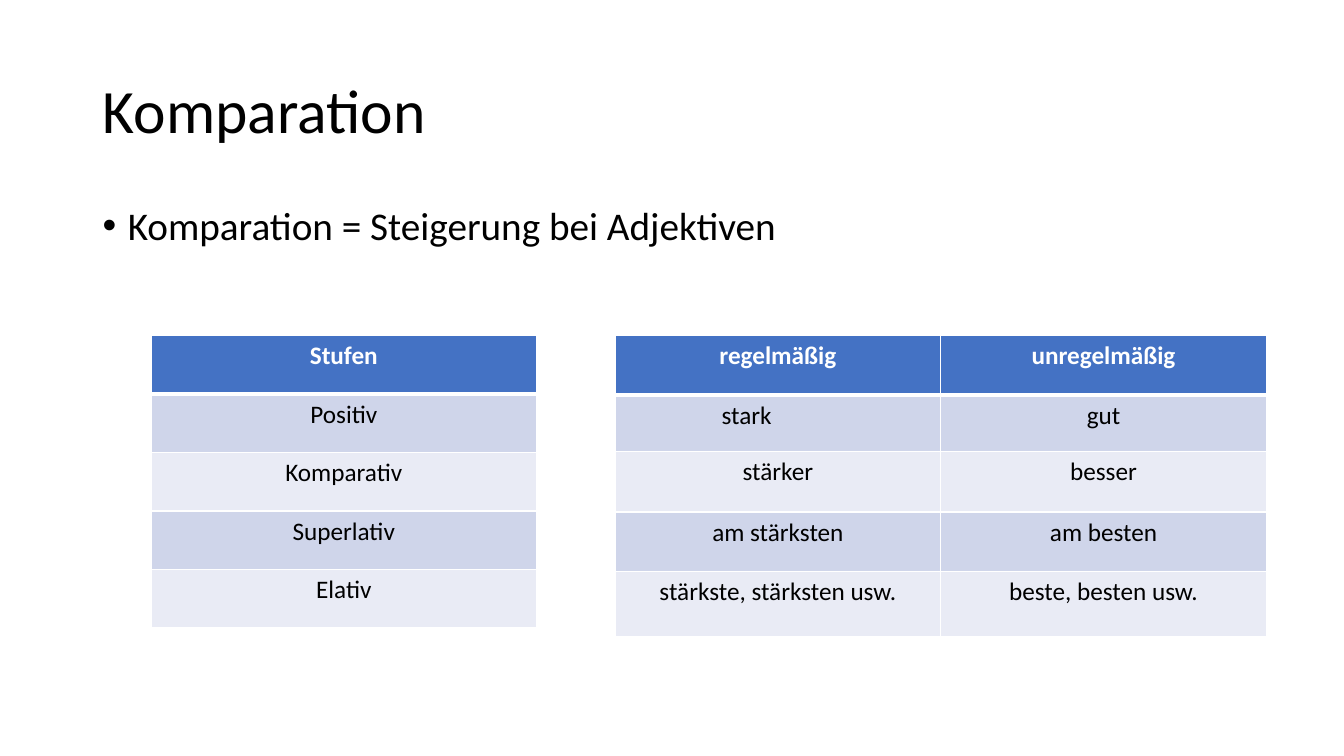
from lxml import etree
from pptx import Presentation
from pptx.dml.color import RGBColor
from pptx.enum.text import MSO_ANCHOR, PP_ALIGN
from pptx.oxml.ns import qn
from pptx.util import Inches, Pt

LEFT, CENTER = PP_ALIGN.LEFT, PP_ALIGN.CENTER
TOP, MIDDLE = MSO_ANCHOR.TOP, MSO_ANCHOR.MIDDLE
FONT = "Calibri"
BLACK, WHITE, HEADER = "000000", "FFFFFF", "4472C4"
BANDS = ("E9EBF5", "CFD5EA")
CONTENT_LEFT, CONTENT_WIDTH = 0.92, 11.5
TABLE_TOP = 3.33

LEVELS = [["Stufen"], ["Positiv"], ["Komparativ"], ["Superlativ"], ["Elativ"]]
FORMS = [
    ["regelmäßig", "unregelmäßig"],
    ["stark", "gut"],
    ["stärker", "besser"],
    ["am stärksten", "am besten"],
    ["stärkste, stärksten usw.", "beste, besten usw."],
]


def color(value):
    """Turn a hex string into a colour."""
    return RGBColor.from_string(value)


def style(para, size, tint, align, bold=False):
    """Set the font and alignment of a paragraph."""
    para.alignment = align
    para.font.name = FONT
    para.font.size = Pt(size)
    para.font.bold = bold
    para.font.color.rgb = color(tint)


def add_title(page, text, left, top, width, height):
    """Place the title placeholder in its box."""
    title = page.shapes.title
    title.left, title.top = Inches(left), Inches(top)
    title.width, title.height = Inches(width), Inches(height)
    frame = title.text_frame
    frame.text = text
    frame.vertical_anchor = MIDDLE
    para = frame.paragraphs[0]
    para.line_spacing = 0.9
    style(para, 44, BLACK, LEFT)


def add_bullet(page, text, left, top, width, height):
    """Add a text box holding one bulleted line."""
    box = page.shapes.add_textbox(Inches(left), Inches(top), Inches(width), Inches(height))
    frame = box.text_frame
    frame.word_wrap = True
    frame.vertical_anchor = TOP
    para = frame.paragraphs[0]
    para.text = text
    para.line_spacing = 0.9
    properties = para._p.get_or_add_pPr()
    properties.set("marL", str(Inches(0.25)))
    properties.set("indent", str(-Inches(0.25)))
    etree.SubElement(properties, qn("a:buFont"), typeface="Arial")
    etree.SubElement(properties, qn("a:buChar"), char="•")
    style(para, 28, BLACK, LEFT)


def add_borders(cell, row):
    """Draw white cell borders, thicker between header and body."""
    properties = cell._tc.get_or_add_tcPr()
    widths = {"L": 1, "R": 1, "T": 3 if row == 1 else 1, "B": 3 if row == 0 else 1}
    for position, (side, width) in enumerate(widths.items()):
        line = etree.Element(qn(f"a:ln{side}"), w=str(Pt(width)))
        fill = etree.SubElement(line, qn("a:solidFill"))
        etree.SubElement(fill, qn("a:srgbClr"), val=WHITE)
        properties.insert(position, line)


def add_grid(page, rows, left, top, width, heights):
    """Add a banded table with equal columns."""
    frame = page.shapes.add_table(len(rows), len(rows[0]), Inches(left), Inches(top),
                                  Inches(width), Inches(sum(heights)))
    table = frame.table
    for column in table.columns:
        column.width = Inches(width / len(rows[0]))
    for row, (texts, height) in enumerate(zip(rows, heights)):
        table.rows[row].height = Inches(height)
        for column, text in enumerate(texts):
            cell = table.cell(row, column)
            cell.text = text
            cell.fill.solid()
            cell.fill.fore_color.rgb = color(BANDS[row % 2] if row else HEADER)
            add_borders(cell, row)
            style(cell.text_frame.paragraphs[0], 18, BLACK if row else WHITE, CENTER, row == 0)
    return table


def build_page(deck):
    """Build the slide on comparison of adjectives."""
    page = deck.slides.add_slide(deck.slide_layouts[5])
    add_title(page, "Komparation", CONTENT_LEFT, 0.4, CONTENT_WIDTH, 1.45)
    add_bullet(page, "Komparation = Steigerung bei Adjektiven",
               CONTENT_LEFT, 2, CONTENT_WIDTH, 4.76)
    add_grid(page, LEVELS, 1.5, TABLE_TOP, 3.82, [0.58] * len(LEVELS))
    forms = add_grid(page, FORMS, 6.1, TABLE_TOP, 6.46, [0.59, 0.56, 0.6, 0.59, 0.65])
    forms.cell(1, 0).margin_right = Inches(0.72)


def main():
    """Create and save the deck."""
    deck = Presentation()
    deck.slide_width, deck.slide_height = Inches(13.33), Inches(7.5)
    build_page(deck)
    deck.save("out.pptx")


if __name__ == "__main__":
    main()
